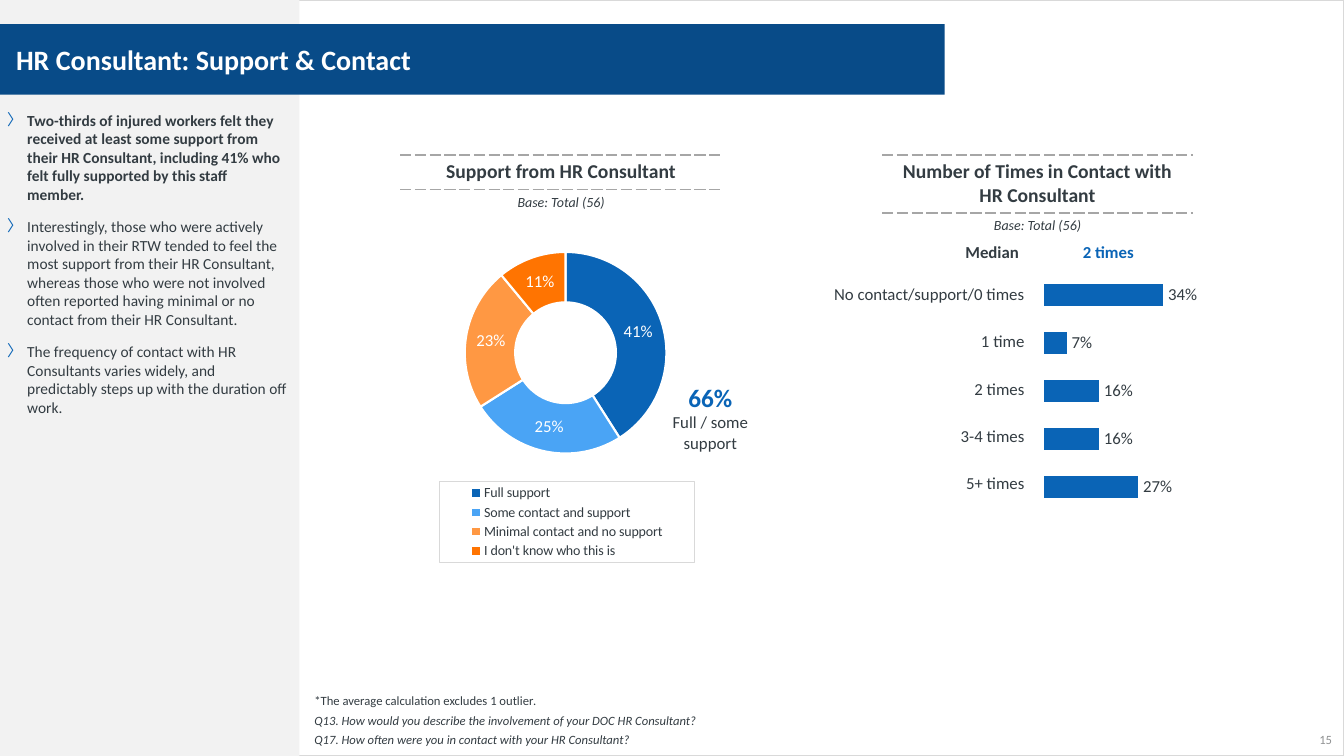
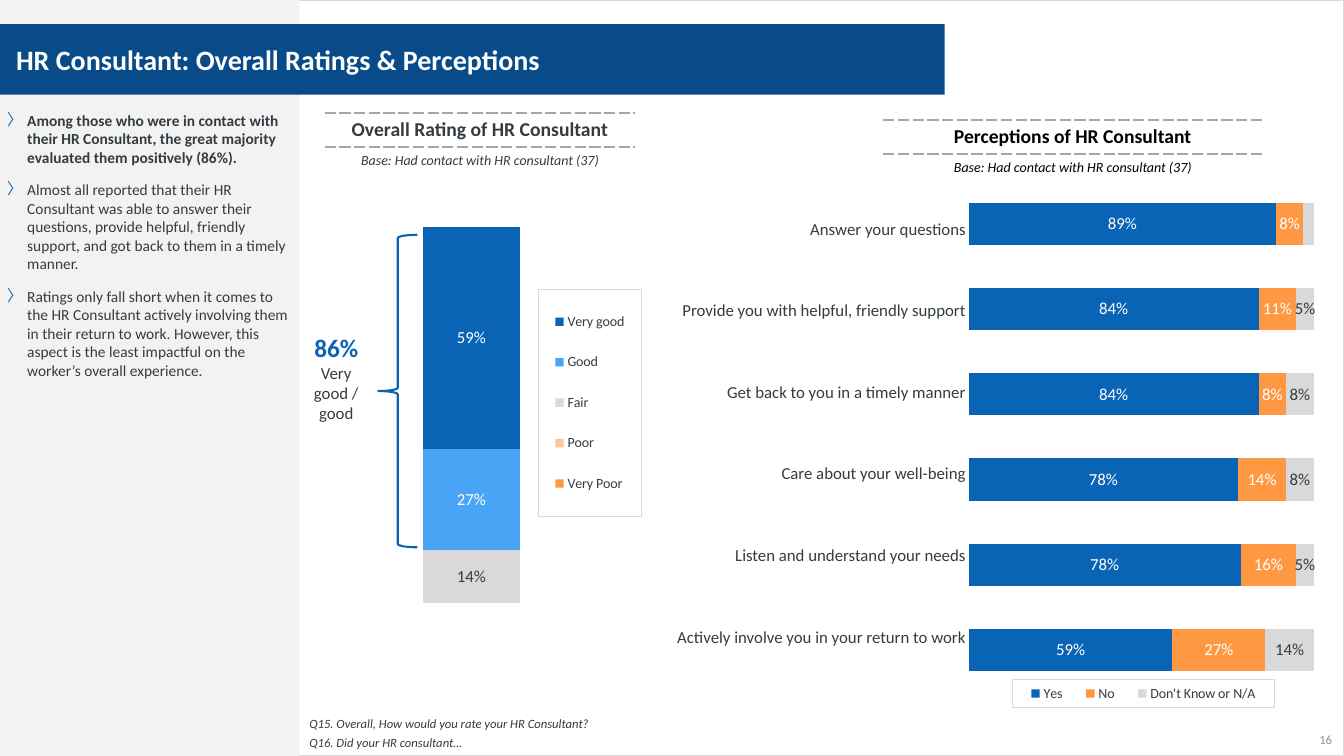
from dataclasses import dataclass
from typing import NamedTuple, Optional

from pptx import Presentation
from pptx.chart.data import CategoryChartData
from pptx.dml.color import RGBColor
from pptx.enum.chart import XL_CHART_TYPE, XL_LABEL_POSITION, XL_LEGEND_POSITION
from pptx.enum.shapes import MSO_SHAPE
from pptx.enum.text import MSO_ANCHOR, PP_ALIGN
from pptx.oxml import parse_xml
from pptx.oxml.ns import nsdecls, qn
from pptx.util import Emu, Pt

# Shared look
EMU_PER_PX = 9144  # 100 px to the inch
FONT = "Calibri"
PLAIN_TABLE = "{2D5ABB26-0587-4C30-8999-92F81FD0307C}"  # no style, no grid
INK, BLACK, WHITE, GREY = "333C42", "000000", "FFFFFF", "909293"
NAVY, BLUE, SKY = "084B88", "0A64B6", "4AA4F5"
PEACH, LIGHT_ORANGE, ORANGE = "FFC799", "FF9843", "FF7401"
PANEL, SILVER, DASH = "F2F2F2", "D9D9D9", "A6A6A6"


class Box(NamedTuple):
    left: int
    top: int
    width: int
    height: int


@dataclass
class Series:
    name: str
    values: list[float]
    fill: str = BLUE
    label: Optional[str] = INK
    point_fills: tuple[str, ...] = ()
    outline: Optional[str] = None


@dataclass
class ChartSpec:
    kind: XL_CHART_TYPE
    frame: Box
    plot: Box
    categories: list[str]
    series: list[Series]
    legend: Optional[Box] = None
    gap: Optional[int] = None
    overlap: int = 0
    axis_max: Optional[float] = None
    reverse: bool = False
    label_position: Optional[XL_LABEL_POSITION] = None


def px(length: int) -> Emu:
    return Emu(length * EMU_PER_PX)


def place(box: Box) -> list[Emu]:
    return [px(length) for length in box]


def color(hex_code: str) -> RGBColor:
    return RGBColor.from_string(hex_code)


# Text
def write(para, text: str, *, size: int = 12, ink: str = INK, bold: bool = False,
          italic: bool = False, align=PP_ALIGN.LEFT) -> None:
    para.alignment = align
    span = para.add_run()
    span.text = text
    font = span.font
    font.name, font.size, font.bold, font.italic = FONT, Pt(size), bold, italic
    font.color.rgb = color(ink)


def next_para(frame, index: int):
    return frame.add_paragraph() if index else frame.paragraphs[0]


def set_margins(target, left: int, top: int, right: int, bottom: int) -> None:
    target.margin_left, target.margin_top = px(left), px(top)
    target.margin_right, target.margin_bottom = px(right), px(bottom)


def add_text(page, box: Box, anchor=MSO_ANCHOR.TOP):
    frame = page.shapes.add_textbox(*place(box)).text_frame
    frame.word_wrap = True
    frame.vertical_anchor = anchor
    return frame


def add_callout(page, box: Box, share: str, meaning: str) -> None:
    frame = add_text(page, box)
    write(frame.paragraphs[0], share, size=18, ink=BLUE, bold=True, align=PP_ALIGN.CENTER)
    write(frame.add_paragraph(), meaning, align=PP_ALIGN.CENTER)


# Shapes
def add_shape(page, box: Box, kind=MSO_SHAPE.RECTANGLE, fill: Optional[str] = None,
              line: Optional[str] = None, weight: float = 1):
    shape = page.shapes.add_shape(kind, *place(box))
    shape.shadow.inherit = False
    if fill:
        shape.fill.solid()
        shape.fill.fore_color.rgb = color(fill)
    else:
        shape.fill.background()
    if line:
        shape.line.color.rgb = color(line)
        shape.line.width = Pt(weight)
    else:
        shape.line.fill.background()
    return shape


# Page frame, findings panel, title band, footnotes and number
def add_page(deck, title: str, number: int, findings: list[str],
             notes_box: Box, notes: list[list[tuple[str, bool]]]):
    page = deck.slides.add_slide(deck.slide_layouts[6])
    add_shape(page, Box(0, 0, 1333, 750), line=SILVER)

    frame = add_shape(page, Box(-4, 0, 301, 750), fill=PANEL).text_frame
    frame.word_wrap = True
    frame.vertical_anchor = MSO_ANCHOR.TOP
    set_margins(frame, 11, 110, 11, 5)
    for index, finding in enumerate(findings):
        para = next_para(frame, index)
        add_bullet(para)
        if index:
            para.space_before = Pt(10)
        write(para, finding, size=11, bold=index == 0)

    frame = add_shape(page, Box(0, 24, 937, 70), fill=NAVY).text_frame
    frame.word_wrap = True
    frame.vertical_anchor = MSO_ANCHOR.MIDDLE
    set_margins(frame, 16, 5, 10, 5)
    write(frame.paragraphs[0], title, size=20, ink=WHITE, bold=True)

    frame = add_text(page, notes_box, MSO_ANCHOR.BOTTOM)
    for index, spans in enumerate(notes):
        para = next_para(frame, index)
        para.space_after = Pt(3)
        for text, italic in spans:
            write(para, text, size=9, italic=italic)

    frame = add_text(page, Box(1292, 721, 39, 26), MSO_ANCHOR.MIDDLE)
    write(frame.paragraphs[0], str(number), size=9, ink=GREY, align=PP_ALIGN.RIGHT)
    return page


def add_bullet(para) -> None:
    properties = para._p.get_or_add_pPr()
    properties.set("marL", str(px(20)))
    properties.set("indent", str(px(-20)))
    for mark in (f'<a:buClr {nsdecls("a")}><a:srgbClr val="{BLUE}"/></a:buClr>',
                 f'<a:buFont {nsdecls("a")} typeface="{FONT}"/>',
                 f'<a:buChar {nsdecls("a")} char="〉"/>'):
        properties.append(parse_xml(mark))


# Tables
def add_grid(page, left: int, top: int, widths: list[int], heights: list[int]):
    box = Box(left, top, sum(widths), sum(heights))
    table = page.shapes.add_table(len(heights), len(widths), *place(box)).table
    table.first_row = table.horz_banding = False
    table._tbl.find(".//" + qn("a:tableStyleId")).text = PLAIN_TABLE
    for column, width in zip(table.columns, widths):
        column.width = px(width)
    for row, height in zip(table.rows, heights):
        row.height = px(height)
    for cell in table.iter_cells():
        cell.fill.background()
    return table


def dash_edges(cell, *edges: str) -> None:
    properties = cell._tc.get_or_add_tcPr()
    for index, edge in enumerate(edges):
        properties.insert(index, parse_xml(
            f'<a:{edge} {nsdecls("a")} w="{Pt(1.5)}"><a:solidFill><a:srgbClr val="{DASH}"/>'
            f'</a:solidFill><a:prstDash val="sysDash"/></a:{edge}>'))


def add_heading(page, left: int, top: int, width: int, title: str, base: str,
                title_height: int = 34, ink: str = INK) -> None:
    table = add_grid(page, left, top, [width], [title_height, 41])
    title_cell, base_cell = table.cell(0, 0), table.cell(1, 0)
    dash_edges(title_cell, "lnT", "lnB")
    dash_edges(base_cell, "lnT")
    write(title_cell.text_frame.paragraphs[0], title, size=14, ink=ink, bold=True,
          align=PP_ALIGN.CENTER)
    write(base_cell.text_frame.paragraphs[0], base, size=10, ink=ink, italic=True,
          align=PP_ALIGN.CENTER)


def add_row_labels(page, left: int, top: int, width: int, height: int,
                   labels: list[str]) -> None:
    table = add_grid(page, left, top, [width], [height] * len(labels))
    for cell, label in zip(table.iter_cells(), labels):
        set_margins(cell, 1, 1, 1, 5)
        cell.vertical_anchor = MSO_ANCHOR.MIDDLE
        write(cell.text_frame.paragraphs[0], label, align=PP_ALIGN.RIGHT)


# Charts
def layout_xml(box: Box, frame: Box, inner: bool = False):
    target = '<c:layoutTarget val="inner"/>' if inner else ""
    shares = {"x": (box.left - frame.left) / frame.width,
              "y": (box.top - frame.top) / frame.height,
              "w": box.width / frame.width, "h": box.height / frame.height}
    modes = '<c:xMode val="edge"/><c:yMode val="edge"/>'
    sizes = "".join(f'<c:{key} val="{share:.4f}"/>' for key, share in shares.items())
    return parse_xml(f'<c:layout {nsdecls("c")}><c:manualLayout>{target}{modes}{sizes}'
                     '</c:manualLayout></c:layout>')


def set_font(font, size: int, ink: str) -> None:
    font.name, font.size = FONT, Pt(size)
    font.color.rgb = color(ink)


def paint(part_format, fill: str, outline: Optional[str]) -> None:
    part_format.fill.solid()
    part_format.fill.fore_color.rgb = color(fill)
    if outline:
        part_format.line.color.rgb = color(outline)
        part_format.line.width = Pt(1.5)


def add_legend(chart, box: Box, frame: Box) -> None:
    chart.has_legend = True
    chart.legend.position = XL_LEGEND_POSITION.BOTTOM
    chart.legend.include_in_layout = False
    set_font(chart.legend.font, 10, INK)
    legend = chart.element.find(".//" + qn("c:legend"))
    for old in legend.findall(qn("c:layout")):
        legend.remove(old)
    legend.find(qn("c:legendPos")).addnext(layout_xml(box, frame))
    legend.find(qn("c:overlay")).addnext(parse_xml(
        f'<c:spPr {nsdecls("c", "a")}><a:ln w="{Pt(0.75)}"><a:solidFill>'
        f'<a:srgbClr val="{SILVER}"/></a:solidFill></a:ln></c:spPr>'))


def add_chart(page, spec: ChartSpec):
    data = CategoryChartData(number_format="0%")
    data.categories = spec.categories
    for item in spec.series:
        data.add_series(item.name, item.values)
    chart = page.shapes.add_chart(spec.kind, *place(spec.frame), data).chart
    chart.has_title = chart.has_legend = False
    set_font(chart.font, 10, INK)
    area = chart.element.find(".//" + qn("c:plotArea"))
    for old in area.findall(qn("c:layout")):
        area.remove(old)
    area.insert(0, layout_xml(spec.plot, spec.frame, inner=True))
    if spec.legend:
        add_legend(chart, spec.legend, spec.frame)

    plot = chart.plots[0]
    plot.vary_by_categories = spec.gap is None
    if spec.gap is not None:
        plot.gap_width, plot.overlap = spec.gap, spec.overlap
        values = chart.value_axis
        values.has_major_gridlines = False
        values.minimum_scale, values.maximum_scale = 0, spec.axis_max
        values.reverse_order = spec.reverse
        values.visible = chart.category_axis.visible = False

    for item, series in zip(spec.series, plot.series):
        paint(series.format, item.fill, item.outline)
        for index, fill in enumerate(item.point_fills):
            paint(series.points[index].format, fill, item.outline)
        if item.label:
            labels = series.data_labels
            labels.show_value = True
            labels.number_format, labels.number_format_is_linked = "0%", False
            set_font(labels.font, 12, item.label)
            if spec.label_position is not None:
                labels.position = spec.label_position
    return chart


def build_support(deck) -> None:
    page = add_page(deck, "HR Consultant: Support & Contact", 15, [
        "Two-thirds of injured workers felt they received at least some support from their HR Consultant, including 41% who felt fully supported by this staff member.",
        "Interestingly, those who were actively involved in their RTW tended to feel the most support from their HR Consultant, whereas those who were not involved often reported having minimal or no contact from their HR Consultant.",
        "The frequency of contact with HR Consultants varies widely, and predictably steps up with the duration off work.",
    ], Box(302, 677, 1000, 69), [
        [("*The average calculation excludes 1 outlier", False), (".", True)],
        [("Q13. How would you describe the involvement of your DOC HR Consultant?", True)],
        [("Q17. How often were you in contact with your HR Consultant?", True)]])
    base = "Base: Total (56)"
    add_heading(page, 397, 154, 319, "Support from HR Consultant", base)
    add_chart(page, ChartSpec(
        XL_CHART_TYPE.DOUGHNUT, Box(297, 236, 508, 335), Box(461, 250, 200, 200),
        ["Full support", "Some contact and support", "Minimal contact and no support",
         "I don't know who this is"],
        [Series("Series 1", [0.41, 0.25, 0.23, 0.11], label=WHITE, outline=WHITE,
                point_fills=(BLUE, SKY, LIGHT_ORANGE, ORANGE))],
        legend=Box(436, 478, 253, 80)))
    add_callout(page, Box(652, 374, 105, 81), "66%", "Full / some support")

    add_heading(page, 875, 154, 308, "Number of Times in Contact with HR Consultant", base,
                title_height=57)
    add_chart(page, ChartSpec(
        XL_CHART_TYPE.BAR_CLUSTERED, Box(917, 252, 362, 399), Box(1034, 269, 142, 238),
        list("12345"), [Series("Series 1", [0.27, 0.16, 0.16, 0.07, 0.34], outline=WHITE)],
        gap=100, axis_max=0.4, label_position=XL_LABEL_POSITION.OUTSIDE_END))
    add_row_labels(page, 792, 271, 225, 47, [
        "No contact/support/0 times", "1 time", "2 times", "3-4 times", "5+ times"])
    median = add_grid(page, 904, 236, [160, 161], [41])
    write(median.cell(0, 0).text_frame.paragraphs[0], "Median", bold=True,
          align=PP_ALIGN.CENTER)
    write(median.cell(0, 1).text_frame.paragraphs[0], "2 times", ink=BLUE, bold=True)


def build_ratings(deck) -> None:
    page = add_page(deck, "HR Consultant: Overall Ratings & Perceptions", 16, [
        "Among those who were in contact with their HR Consultant, the great majority evaluated them positively (86%).",
        "Almost all reported that their HR Consultant was able to answer their questions, provide helpful, friendly support, and got back to them in a timely manner.",
        "Ratings only fall short when it comes to the HR Consultant actively involving them in their return to work. However, this aspect is the least impactful on the worker’s overall experience.",
    ], Box(297, 680, 1000, 69), [
        [("Q15. Overall, How would you rate your HR Consultant?", True)],
        [("Q16. Did your HR consultant…", True)]])
    base = "Base: Had contact with HR consultant (37)"
    add_chart(page, ChartSpec(
        XL_CHART_TYPE.COLUMN_STACKED, Box(338, 184, 374, 493), Box(348, 225, 239, 448), ["1"],
        [Series("Very good", [0.59], BLUE, WHITE), Series("Good", [0.27], SKY, WHITE),
         Series("Fair", [0.14], SILVER), Series("Poor", [0], PEACH, None),
         Series("Very Poor", [0], LIGHT_ORANGE, None)],
        legend=Box(534, 287, 102, 225), gap=150, overlap=100, axis_max=1.2, reverse=True))
    add_heading(page, 322, 112, 308, "Overall Rating of HR Consultant", base)
    add_shape(page, Box(375, 233, 39, 310), MSO_SHAPE.LEFT_BRACE, line=BLUE, weight=1.5)
    add_callout(page, Box(297, 325, 73, 101), "86%", "Very good / good")

    add_heading(page, 876, 119, 376, "Perceptions of HR Consultant", base, ink=BLACK)
    chart = add_chart(page, ChartSpec(
        XL_CHART_TYPE.BAR_STACKED_100, Box(954, 169, 357, 560), Box(961, 180, 342, 507),
        list("123456"),
        [Series("Yes", [0.59, 0.78, 0.78, 0.84, 0.84, 0.89], BLUE, WHITE),
         Series("No", [0.27, 0.16, 0.14, 0.08, 0.11, 0.08], LIGHT_ORANGE, WHITE),
         Series("Don't Know or N/A", [0.14, 0.05, 0.08, 0.08, 0.05, 0.03], SILVER)],
        legend=Box(1004, 674, 260, 28), gap=102, overlap=100, axis_max=1,
        label_position=XL_LABEL_POSITION.CENTER))
    # The narrowest segment carries no label
    chart.element.findall(".//" + qn("c:dLbls"))[-1].insert(0, parse_xml(
        f'<c:dLbl {nsdecls("c")}><c:idx val="5"/><c:delete val="1"/></c:dLbl>'))
    add_row_labels(page, 630, 189, 329, 81, [
        "Answer your questions", "Provide you with helpful, friendly support",
        "Get back to you in a timely manner", "Care about your well-being",
        "Listen and understand your needs", "Actively involve you in your return to work"])


def main() -> None:
    deck = Presentation()
    deck.slide_width, deck.slide_height = px(1333), px(750)
    build_support(deck)
    build_ratings(deck)
    deck.save("out.pptx")


if __name__ == "__main__":
    main()
